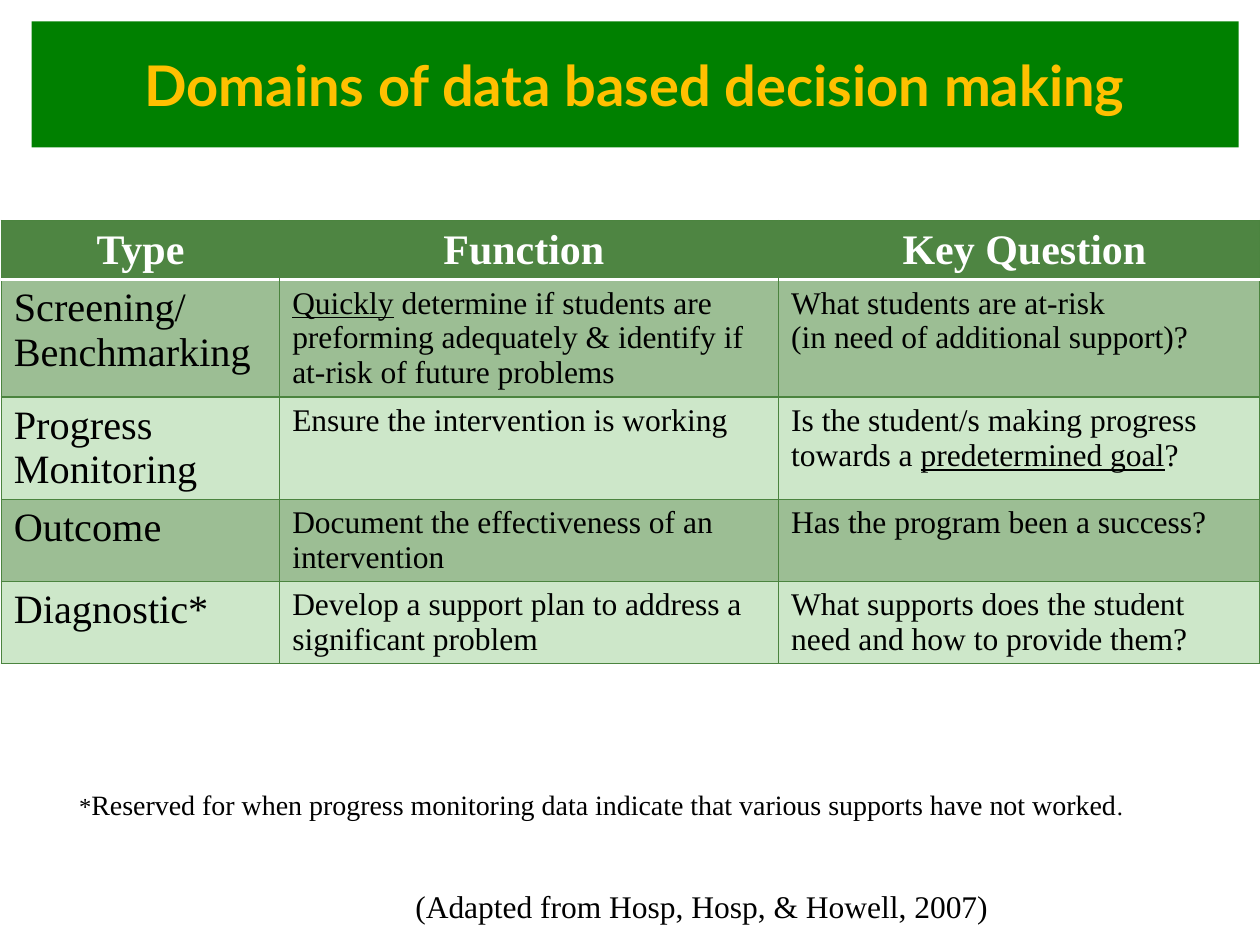
import pptx
import pptx.dml.color
import pptx.enum.shapes
import pptx.enum.text
import pptx.oxml
import pptx.oxml.ns
import pptx.util
from dataclasses import dataclass

Inches = pptx.util.Inches
Pt = pptx.util.Pt
RGB = pptx.dml.color.RGBColor.from_string
ALIGN = pptx.enum.text.PP_ALIGN
ANCHOR = pptx.enum.text.MSO_ANCHOR


@dataclass(frozen=True)
class Theme:
    banner: str = "008000"
    gold: str = "FFC000"
    header: str = "4E8542"
    dark_band: str = "9CBE94"
    light_band: str = "CDE7C9"
    border: str = "4B843F"
    white: str = "FFFFFF"
    black: str = "000000"
    title_font: str = "Lato"
    body_font: str = "Times New Roman"
    title_size: int = 32
    header_size: int = 24
    type_size: int = 23
    body_size: int = 18
    note_size: int = 16
    mark_size: int = 14


def write(tf, paragraphs, align=ALIGN.CENTER, **fmt):
    """Fill a text frame; a paragraph is a string or a list of (text, overrides)."""
    for i, runs in enumerate(paragraphs):
        p = tf.add_paragraph() if i else tf.paragraphs[0]
        p.alignment = align
        for text, extra in [(runs, {})] if isinstance(runs, str) else runs:
            style = {**fmt, **extra}
            for j, line in enumerate(text.split("\n")):
                if j:
                    p.add_line_break()
                r = p.add_run()
                r.text = line
                r.font.name = style["font"]
                r.font.size = Pt(style["size"])
                r.font.color.rgb = RGB(style["color"])
                r.font.bold = style.get("bold", False)
                r.font.underline = style.get("underline", False)


class SlideBuilder:
    def __init__(self, s, theme):
        self.s, self.theme = s, theme
        self.body = dict(font=theme.body_font, color=theme.black)

    def banner(self, box, text):
        t = self.theme
        sp = self.s.shapes.add_shape(
            pptx.enum.shapes.MSO_SHAPE.RECTANGLE, *map(Inches, box))
        sp.shadow.inherit = False
        sp.fill.solid()
        sp.fill.fore_color.rgb = RGB(t.banner)
        sp.line.fill.background()
        sp.text_frame.word_wrap = True
        sp.text_frame.vertical_anchor = ANCHOR.MIDDLE
        write(sp.text_frame, [text], font=t.title_font, size=t.title_size,
              color=t.gold, bold=True)

    def text(self, box, paragraphs, size):
        tf = self.s.shapes.add_textbox(*map(Inches, box)).text_frame
        tf.word_wrap = True
        tf.auto_size = pptx.enum.text.MSO_AUTO_SIZE.SHAPE_TO_FIT_TEXT
        write(tf, paragraphs, size=size, **self.body)

    def borders(self, cell, **sides):
        """Draw each side as (color, points); must run before the cell fill is set."""
        tc_pr = cell._tc.get_or_add_tcPr()
        for side in ("L", "R", "T", "B"):
            color, points = sides.get(side, (self.theme.border, 0.75))
            tc_pr.append(pptx.oxml.parse_xml(
                f'<a:ln{side} {pptx.oxml.ns.nsdecls("a")} w="{Pt(points)}">'
                f'<a:solidFill><a:srgbClr val="{color}"/></a:solidFill></a:ln{side}>'))

    def table(self, left, top, widths, heights, rows):
        t = self.theme
        table = self.s.shapes.add_table(
            len(rows), len(widths), Inches(left), Inches(top),
            Inches(sum(widths)), Inches(sum(heights))).table
        for column, width in zip(table.columns, widths):
            column.width = Inches(width)
        rule = (t.white, 2)
        for i, (row, height) in enumerate(zip(rows, heights)):
            table.rows[i].height = Inches(height)
            for j, paragraphs in enumerate(row):
                cell = table.cell(i, j)
                if i == 0:
                    fill = t.header
                    inner = (t.header, 0.75)
                    sides = {"B": rule}
                    if j > 0:
                        sides["L"] = inner
                    if j < len(row) - 1:
                        sides["R"] = inner
                    fmt = dict(font=t.body_font, size=t.header_size,
                               color=t.white, bold=True)
                else:
                    fill = t.dark_band if i % 2 else t.light_band
                    sides = {"T": rule} if i == 1 else {}
                    fmt = dict(self.body, align=ALIGN.LEFT,
                               size=t.body_size if j else t.type_size)
                self.borders(cell, **sides)
                cell.fill.solid()
                cell.fill.fore_color.rgb = RGB(fill)
                write(cell.text_frame, paragraphs, **fmt)


def main():
    prs = pptx.Presentation()
    prs.slide_width, prs.slide_height = Inches(10), Inches(7.5)
    theme = Theme()
    slide = SlideBuilder(prs.slides.add_slide(prs.slide_layouts[6]), theme)

    # Table of decision domains
    under = dict(underline=True)
    rows = [
        [["Type"], ["Function "], [" Key Question"]],
        [["Screening/", "Benchmarking"],
         [[("Quickly", under),
           (" determine if students are preforming adequately & identify if "
            "at-risk of future problems", {})]],
         ["What students are at-risk \n(in need of additional support)?"]],
        [["Progress Monitoring"],
         ["Ensure the intervention is working"],
         [[("Is the student/s making progress towards a ", {}),
           ("predetermined goal", under), ("?", {})]]],
        [["Outcome"],
         ["Document the effectiveness of an intervention "],
         ["Has the program been a success?"]],
        [["Diagnostic*"],
         ["Develop a support plan to address a significant problem "],
         ["What supports does the student need and how to provide them?"]],
    ]
    slide.table(0.01, 1.75, [2.21, 3.96, 3.82], [0.47, 0.93, 0.81, 0.65, 0.65], rows)

    # Citation and footnote
    slide.text((2.83, 6.99, 5.48, 0.4),
               ["(Adapted from Hosp, Hosp, & Howell, 2007)"], theme.body_size)
    mark = dict(size=theme.mark_size)
    slide.text((0.13, 6.2, 9.28, 0.37),
               [[("*", mark),
                 ("Reserved for when progress monitoring data indicate that "
                  "various supports have not worked", {}),
                 (".", mark)]], theme.note_size)

    # Title banner
    slide.banner((0.25, 0.17, 9.58, 1), "Domains of data based decision making")

    prs.save("out.pptx")


if __name__ == "__main__":
    main()
